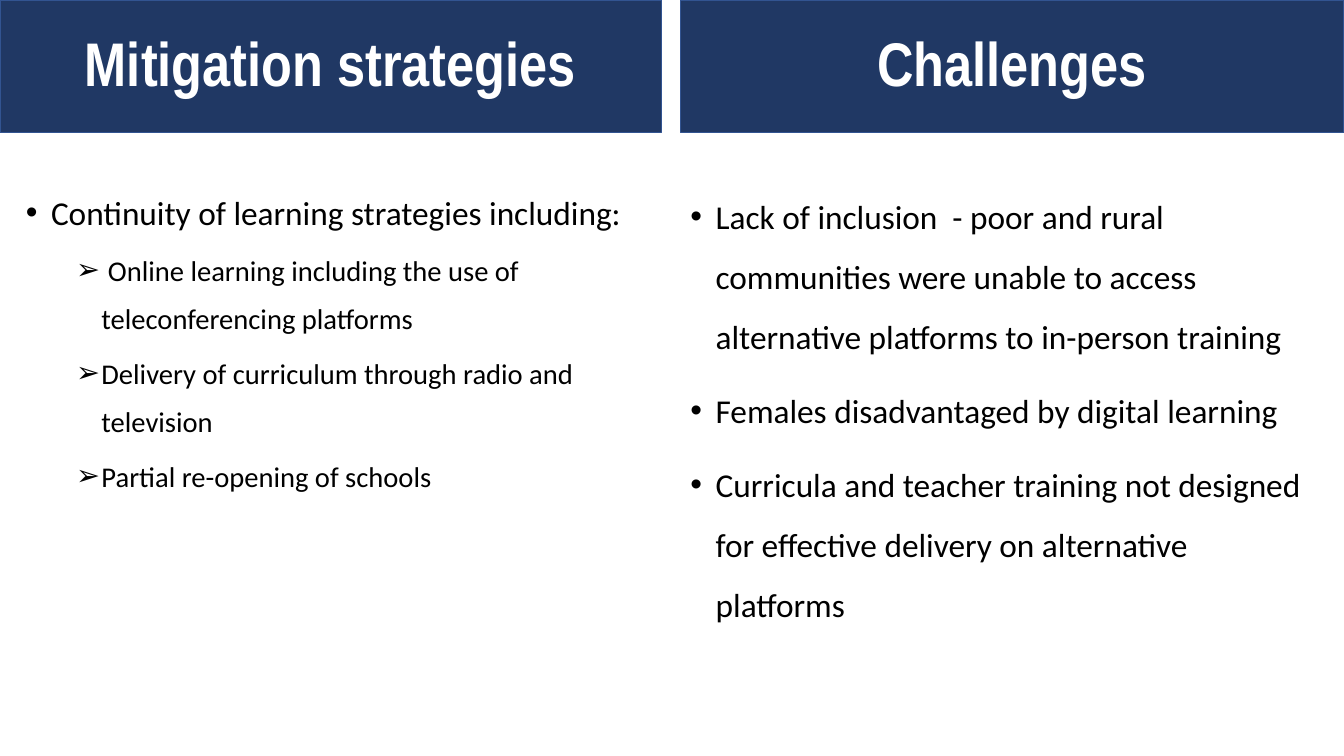
"""Build the slide that sets mitigation strategies beside challenges."""
from lxml.etree import SubElement
from pptx import Presentation
from pptx.dml.color import RGBColor
from pptx.enum.text import MSO_ANCHOR, MSO_AUTO_SIZE, PP_ALIGN
from pptx.oxml.ns import qn
from pptx.util import Pt

PX = 9525
INK = {"navy": "203864", "edge": "325491", "white": "FFFFFF", "black": "000000"}
LEVELS = [("•", 24, 23.8, 10), ("➢", 72, 20.4, 5)]
LEFT = [
    (0, "Continuity of learning strategies including:"),
    (1, " Online learning including the use of teleconferencing platforms"),
    (1, "Delivery of curriculum through radio and television"),
    (1, "Partial re-opening of schools"),
]
RIGHT = [
    (0, "Lack of inclusion  - poor and rural communities were unable to access "
        "alternative platforms to in-person training"),
    (0, "Females disadvantaged by digital learning"),
    (0, "Curricula and teacher training not designed for effective delivery "
        "on alternative platforms"),
]


def tint(name):
    return RGBColor.from_string(INK[name])


def place(shape, x, y, w, h):
    shape.left, shape.top = x * PX, y * PX
    shape.width, shape.height = w * PX, h * PX
    frame = shape.text_frame
    frame.word_wrap = True
    frame.auto_size = MSO_AUTO_SIZE.NONE
    return frame


def style(para, face, size, color, bold=False):
    for run in para.runs:
        font = run.font
        font.name, font.size, font.bold = face, Pt(size), bold
        font.color.rgb = tint(color)


def head(shape, x, w, text):
    frame = place(shape, x, 0, w, 126)
    shape.fill.solid()
    shape.fill.fore_color.rgb = tint("navy")
    shape.line.color.rgb = tint("edge")
    shape.line.width = Pt(1)
    frame.vertical_anchor = MSO_ANCHOR.MIDDLE
    frame.text = text
    para = frame.paragraphs[0]
    para.alignment = PP_ALIGN.CENTER
    para.line_spacing = 0.9
    para.space_before = Pt(0)
    style(para, "Arial Narrow", 44, "white", True)


def bullet(para, mark, indent):
    props = para._p.get_or_add_pPr()
    props.set("marL", str(indent * PX))
    props.set("indent", str(-24 * PX))
    SubElement(props, qn("a:buFont")).set("typeface", "Arial")
    SubElement(props, qn("a:buChar")).set("char", mark)


def points(shape, x, w, items, pitch):
    frame = place(shape, x, 163, w, 487)
    frame.vertical_anchor = MSO_ANCHOR.TOP
    frame.text = "\n".join(text for _, text in items)
    for i, (para, (level, _)) in enumerate(zip(frame.paragraphs, items)):
        mark, indent, size, gap = LEVELS[level]
        para.level = level
        bullet(para, mark, indent)
        para.line_spacing = pitch
        para.space_before = Pt(gap if i else 0)
        style(para, "Calibri", size, "black")


def main():
    deck = Presentation()
    deck.slide_width, deck.slide_height = 1280 * PX, 720 * PX
    slide = deck.slides.add_slide(deck.slide_layouts[4])
    title, *slots = slide.placeholders
    title.element.getparent().remove(title.element)
    head(slots[0], 0, 630, "Mitigation strategies")
    points(slots[1], 15, 614, LEFT, 1.4)
    head(slots[2], 648, 632, "Challenges")
    points(slots[3], 648, 605, RIGHT, 1.5)
    deck.save("out.pptx")


if __name__ == "__main__":
    main()
